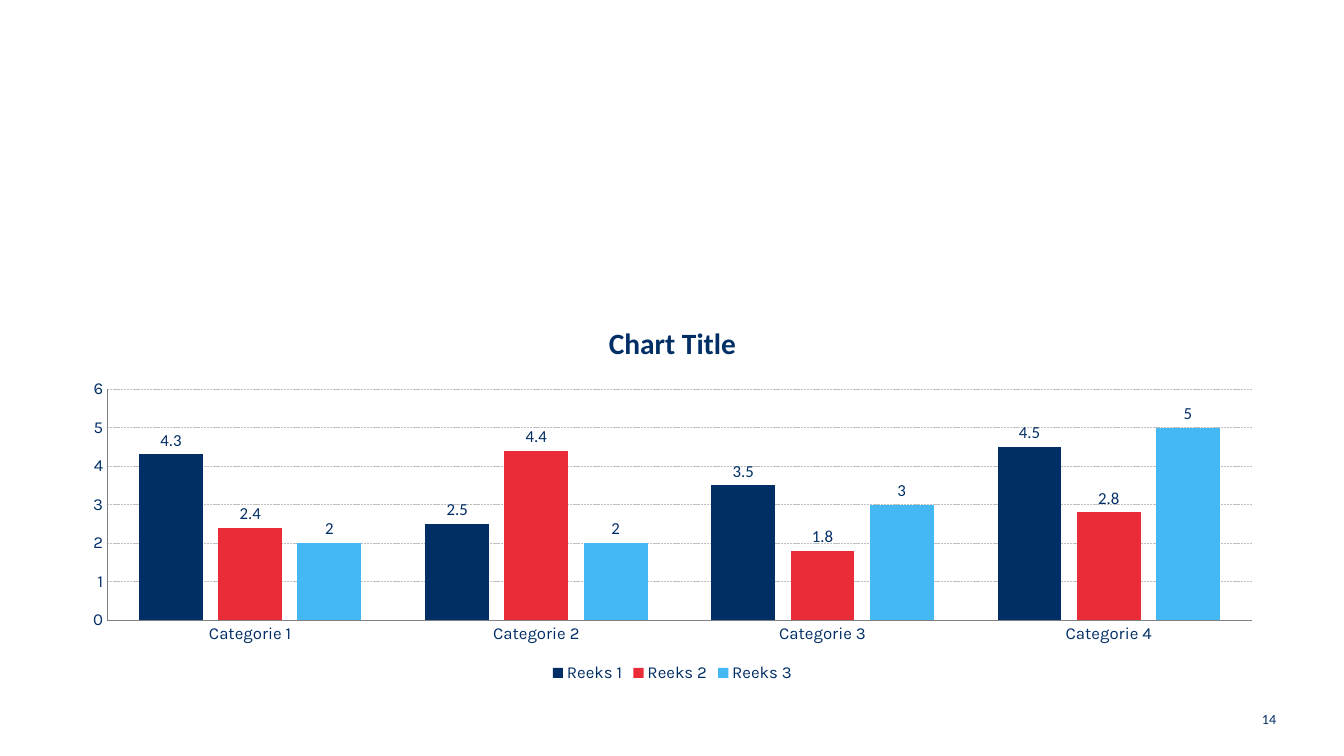
from pptx import Presentation
from pptx.chart.data import CategoryChartData
from pptx.dml.color import RGBColor
from pptx.enum.chart import XL_CHART_TYPE, XL_LABEL_POSITION, XL_LEGEND_POSITION, XL_TICK_MARK
from pptx.enum.dml import MSO_LINE
from pptx.enum.text import MSO_ANCHOR, PP_ALIGN
from pptx.util import Emu, Pt

SLIDE_WIDTH, SLIDE_HEIGHT = 1344, 756
EMU_PER_PX = 12192000 / SLIDE_WIDTH
NAVY, RED, SKY = "002E65", "EA2C38", "44B8F3"
AXIS_GREY, GRID_GREY = "808080", "BFBFBF"
HEADING_FONT, BODY_FONT = "Calibri", "Karla"
CATEGORIES = ["Categorie 1", "Categorie 2", "Categorie 3", "Categorie 4"]
SERIES = [
    ("Reeks 1", [4.3, 2.5, 3.5, 4.5], NAVY),
    ("Reeks 2", [2.4, 4.4, 1.8, 2.8], RED),
    ("Reeks 3", [2, 2, 3, 5], SKY),
]


def px(length):
    """Turn pixels into EMU."""
    return Emu(round(length * EMU_PER_PX))


def color(hex_code):
    """Turn a hex string into a colour."""
    return RGBColor.from_string(hex_code)


def style_font(font, size, name, bold=False):
    """Set size, typeface, weight and the navy text colour."""
    font.size = Pt(size)
    font.name = name
    font.bold = bold
    font.color.rgb = color(NAVY)


def style_line(line, hex_code):
    """Give a chart line its colour and hairline width."""
    line.color.rgb = color(hex_code)
    line.width = Pt(0.5)


def style_title(chart):
    """Write the chart heading."""
    chart.has_title = True
    chart.chart_title.include_in_layout = False
    run = chart.chart_title.text_frame.paragraphs[0].add_run()
    run.text = "Chart Title"
    style_font(run.font, 21, HEADING_FONT, bold=True)


def style_axes(chart):
    """Format both axes and the dashed gridlines."""
    for axis in (chart.category_axis, chart.value_axis):
        axis.major_tick_mark = axis.minor_tick_mark = XL_TICK_MARK.NONE
        style_font(axis.tick_labels.font, 12, BODY_FONT)
        style_line(axis.format.line, AXIS_GREY)
    value_axis = chart.value_axis
    value_axis.minimum_scale = 0
    value_axis.maximum_scale = 6
    value_axis.major_unit = 1
    value_axis.has_major_gridlines = True
    grid_line = value_axis.major_gridlines.format.line
    style_line(grid_line, GRID_GREY)
    grid_line.dash_style = MSO_LINE.SQUARE_DOT


def style_columns(plot):
    """Space and colour the columns and show their values."""
    plot.gap_width = 100
    plot.overlap = -24
    plot.vary_by_categories = False
    for series, (_, _, fill) in zip(plot.series, SERIES):
        series.format.fill.solid()
        series.format.fill.fore_color.rgb = color(fill)
        labels = series.data_labels
        labels.show_value = True
        labels.position = XL_LABEL_POSITION.OUTSIDE_END
        style_font(labels.font, 12, HEADING_FONT)


def add_column_chart(slide, left, top, width, height):
    """Place the clustered column chart in the given box."""
    data = CategoryChartData()
    data.categories = CATEGORIES
    for name, values, _ in SERIES:
        data.add_series(name, values)
    chart = slide.shapes.add_chart(
        XL_CHART_TYPE.COLUMN_CLUSTERED, px(left), px(top), px(width), px(height), data
    ).chart
    style_font(chart.font, 10, BODY_FONT)
    style_title(chart)
    style_axes(chart)
    style_columns(chart.plots[0])
    chart.has_legend = True
    chart.legend.position = XL_LEGEND_POSITION.BOTTOM
    chart.legend.include_in_layout = False
    style_font(chart.legend.font, 12, BODY_FONT)


def add_page_number(slide, left, top, width, height):
    """Place the page number at the right of the given box."""
    shape = slide.shapes.add_textbox(px(left), px(top), px(width), px(height))
    shape.text_frame.word_wrap = True
    shape.text_frame.vertical_anchor = MSO_ANCHOR.MIDDLE
    paragraph = shape.text_frame.paragraphs[0]
    paragraph.alignment = PP_ALIGN.RIGHT
    run = paragraph.add_run()
    run.text = "14"
    style_font(run.font, 10, HEADING_FONT)


def main():
    """Build and save the slide."""
    presentation = Presentation()
    presentation.slide_width = px(SLIDE_WIDTH)
    presentation.slide_height = px(SLIDE_HEIGHT)
    slide = presentation.slides.add_slide(presentation.slide_layouts[6])
    add_page_number(slide, 984, 699, 302, 40)
    add_column_chart(slide, 69, 304, 1207, 383)
    presentation.save("out.pptx")


if __name__ == "__main__":
    main()
